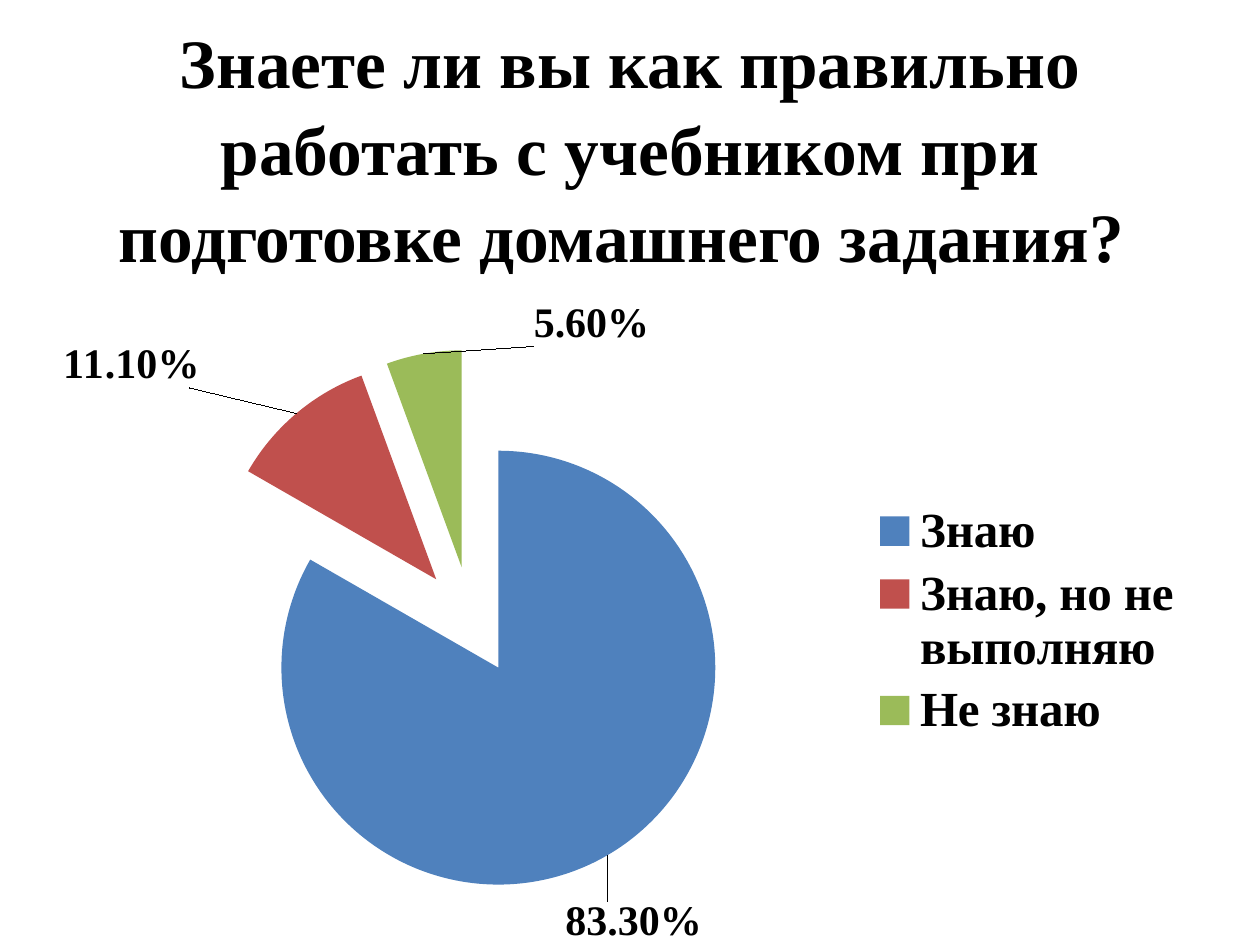
from lxml.etree import SubElement
from pptx import Presentation
from pptx.chart.data import CategoryChartData
from pptx.dml.color import RGBColor
from pptx.enum.chart import XL_CHART_TYPE, XL_LABEL_POSITION, XL_LEGEND_POSITION
from pptx.enum.text import MSO_ANCHOR, MSO_AUTO_SIZE, PP_ALIGN
from pptx.oxml import parse_xml
from pptx.oxml.ns import nsdecls, qn
from pptx.util import Inches, Pt

BLACK = RGBColor(0x00, 0x00, 0x00)
BLUE = RGBColor(0x4F, 0x81, 0xBD)
RED = RGBColor(0xC0, 0x50, 0x4D)
GREEN = RGBColor(0x9B, 0xBB, 0x59)
SERIF = "Times New Roman"
TITLE = "Знаете ли вы как правильно работать с учебником при подготовке домашнего задания? "
SLICES = [
    ("Знаю", 0.833, BLUE, (-0.04, 0.06)),
    ("Знаю, но не выполняю", 0.111, RED, (-0.09, -0.03)),
    ("Не знаю", 0.056, GREEN, (0.2, 0)),
]


def style(font, size):
    font.name = SERIF
    font.size = Pt(size)
    font.bold = True
    font.color.rgb = BLACK


def layout(**parts):
    root = parse_xml(f"<c:layout {nsdecls('c')}><c:manualLayout/></c:layout>")
    for tag, val in parts.items():
        SubElement(root[0], qn(f"c:{tag}")).set("val", str(val))
    return root


def place(node, **parts):
    for old in node.findall(qn("c:layout")):
        node.remove(old)
    spot = layout(**parts)
    if node.tag == qn("c:plotArea"):
        node.insert(0, spot)
    else:
        lead = "c:idx" if node.tag == qn("c:dLbl") else "c:legendPos"
        node.find(qn(lead)).addnext(spot)


def add_title(slide, box):
    title = slide.shapes.title
    title.left, title.top, title.width, title.height = box
    frame = title.text_frame
    frame.text = TITLE
    frame.word_wrap = True
    frame.auto_size = MSO_AUTO_SIZE.NONE
    frame.vertical_anchor = MSO_ANCHOR.MIDDLE
    par = frame.paragraphs[0]
    par.alignment = PP_ALIGN.CENTER
    par.line_spacing = 1.05
    style(par.runs[0].font, 39.6)


def add_pie(slide, box):
    data = CategoryChartData(number_format="0.00%")
    data.categories = [name for name, *_ in SLICES]
    data.add_series("Series 1", [val for _, val, *_ in SLICES])
    chart = slide.shapes.add_chart(XL_CHART_TYPE.PIE, *box, data).chart
    chart.has_title = False
    chart.font.name = "Calibri"
    chart.font.size = Pt(10)
    chart.font.color.rgb = BLACK

    chart.has_legend = True
    legend = chart.legend
    legend.position = XL_LEGEND_POSITION.RIGHT
    legend.include_in_layout = False
    style(legend.font, 28)
    place(legend._element, xMode="edge", yMode="edge", x=0.71, y=0.32, w=0.28, h=0.38)

    plot = chart.plots[0]
    plot.vary_by_categories = True
    series = plot.series[0]
    burst = parse_xml(f'<c:explosion {nsdecls("c")} val="25"/>')
    series.format.fill.solid()
    series.format.fill.fore_color.rgb = BLUE
    series._element.find(qn("c:spPr")).addnext(burst)

    labels = series.data_labels
    labels.show_value = True
    labels.show_percentage = False
    labels.number_format = "0.00%"
    labels.number_format_is_linked = False
    labels.position = XL_LABEL_POSITION.OUTSIDE_END
    labels.show_leader_lines = False
    style(labels.font, 24)
    for i, (_, _, color, (x, y)) in enumerate(SLICES):
        point = series.points[i]
        point.format.fill.solid()
        point.format.fill.fore_color.rgb = color
        label = point.data_label
        style(label.font, 24)
        label.position = XL_LABEL_POSITION.OUTSIDE_END
        place(labels._element.findall(qn("c:dLbl"))[i], x=x, y=y)

    area = chart._chartSpace.chart.plotArea
    place(area, layoutTarget="inner", xMode="edge", yMode="edge",
          x=0.12, y=0.1, w=0.48, h=0.82)


def main():
    deck = Presentation()
    deck.slide_width, deck.slide_height = Inches(10), Inches(7.5)
    slide = deck.slides.add_slide(deck.slide_layouts[5])
    add_title(slide, (Inches(0.5), Inches(0.76), Inches(9), Inches(0.79)))
    add_pie(slide, (Inches(0.5), Inches(2.25), Inches(9), Inches(5.25)))
    deck.save("out.pptx")


if __name__ == "__main__":
    main()
